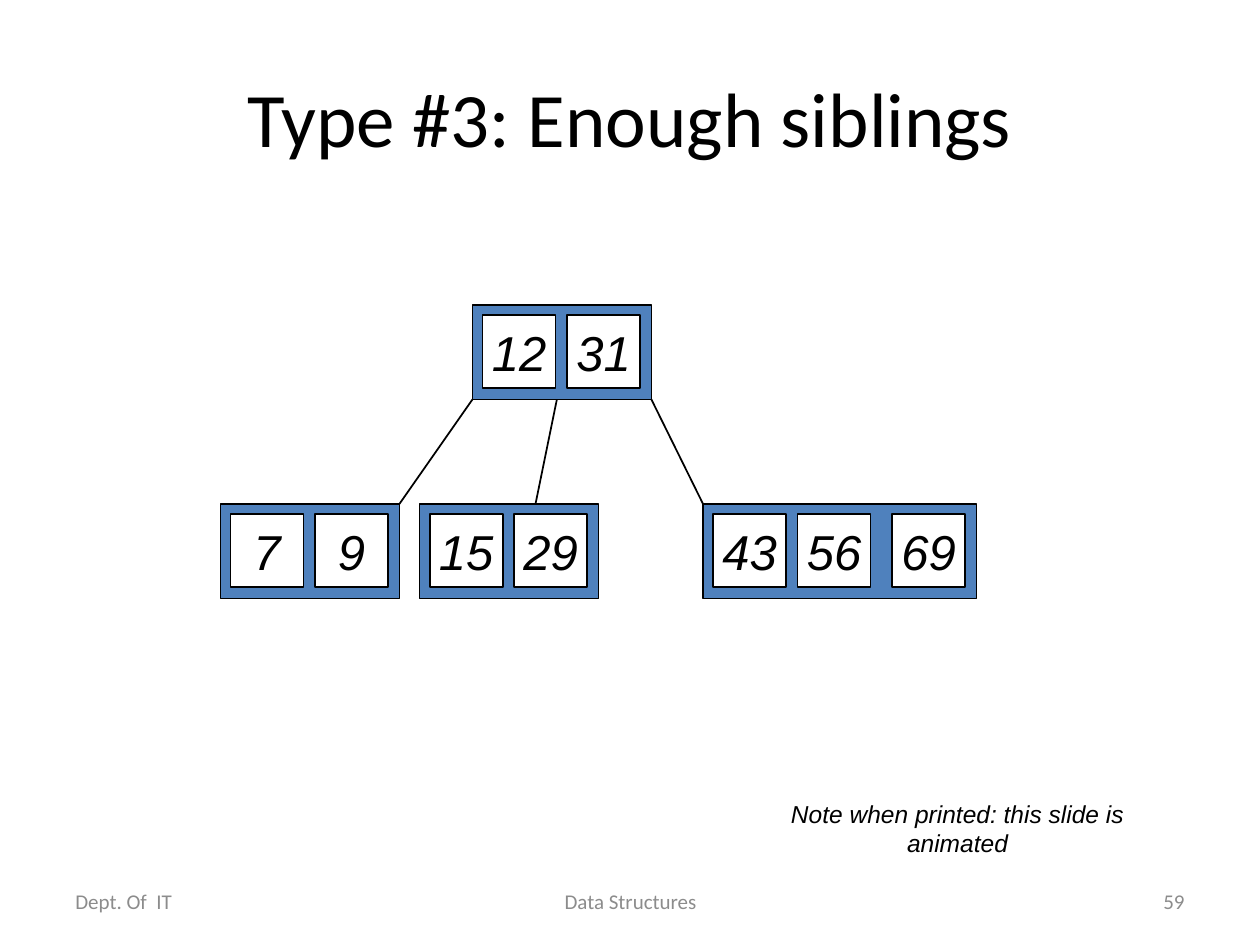
from lxml import etree
from pptx import Presentation
from pptx.dml.color import RGBColor
from pptx.enum.shapes import MSO_CONNECTOR, MSO_SHAPE
from pptx.enum.text import MSO_ANCHOR, PP_ALIGN
from pptx.oxml.ns import qn
from pptx.util import Inches, Pt

LEFT, CENTER, RIGHT = PP_ALIGN.LEFT, PP_ALIGN.CENTER, PP_ALIGN.RIGHT
MIDDLE = MSO_ANCHOR.MIDDLE
RECTANGLE = MSO_SHAPE.RECTANGLE
STRAIGHT = MSO_CONNECTOR.STRAIGHT

BLACK, WHITE, BLUE, GRAY = "000000", "FFFFFF", "4F81BD", "8C8C8C"

TITLE = "Type #3: Enough siblings"
NOTE = "Note when printed: this slide is animated"
FOOTERS = [
    ("Dept. Of  IT", 0.5, 2.33, LEFT),
    ("Data Structures", 3.42, 3.17, CENTER),
    ("59", 7.17, 2.33, RIGHT),
]

NODE_HEIGHT, KEY_SIZE, PADDING = 0.75, 0.58, 0.08
KEY_OFFSETS = [PADDING, 0.75, 1.5]
NODE_WIDTHS = {2: 1.42, 3: 2.17}
ROOT = (3.75, 2.42, ["12", "31"])
# Child left, top, keys; where its edge leaves the root and meets the child
CHILDREN = [
    ((1.75, 4, ["7", "9"]), 0, 1.42),
    ((3.33, 4, ["15", "29"]), 0.67, 0.92),
    ((5.58, 4, ["43", "56", "69"]), 1.42, 0),
]


def color(value):
    return RGBColor.from_string(value)


def write(shape, text, size, font, fill=BLACK, align=CENTER, italic=False, wrap=True):
    frame = shape.text_frame
    frame.word_wrap = wrap
    frame.vertical_anchor = MIDDLE
    para = frame.paragraphs[0]
    para.alignment = align
    span = para.add_run()
    span.text = text
    span.font.size = Pt(size)
    span.font.name = font
    span.font.italic = italic
    span.font.color.rgb = color(fill)


def add_text(page, left, top, width, height, *args, **style):
    box = page.shapes.add_textbox(*map(Inches, (left, top, width, height)))
    write(box, *args, **style)


def outline(shape):
    shape.line.color.rgb = color(BLACK)
    shape.line.width = Pt(1)


def add_box(page, left, top, width, height, fill):
    box = page.shapes.add_shape(RECTANGLE, *map(Inches, (left, top, width, height)))
    box.shadow.inherit = False
    box.fill.solid()
    box.fill.fore_color.rgb = color(fill)
    outline(box)
    return box


def add_node(page, left, top, keys):
    """Draw a tree node with one white cell per key."""
    add_box(page, left, top, NODE_WIDTHS[len(keys)], NODE_HEIGHT, BLUE)
    for key, offset in zip(keys, KEY_OFFSETS):
        cell = add_box(page, left + offset, top + PADDING, KEY_SIZE, KEY_SIZE, WHITE)
        write(cell, key, 28, "Arial", italic=True, wrap=False)


def add_edge(page, start_x, start_y, end_x, end_y):
    edge = page.shapes.add_connector(
        STRAIGHT, *map(Inches, (start_x, start_y, end_x, end_y)))
    outline(edge)
    properties = edge._element.find(qn("p:spPr"))
    etree.SubElement(properties, qn("a:effectLst"))


def main():
    deck = Presentation()
    deck.slide_width, deck.slide_height = Inches(10), Inches(7.5)
    page = deck.slides.add_slide(deck.slide_layouts[5])

    title = page.shapes.title
    title.left, title.top, title.width, title.height = map(Inches, (0.5, 0.3, 9, 1.25))
    write(title, TITLE, 44, "Calibri")

    root_left, root_top, _ = ROOT
    add_node(page, *ROOT)
    for child, start, end in CHILDREN:
        add_node(page, *child)
        add_edge(page, root_left + start, root_top + NODE_HEIGHT,
                 child[0] + end, child[1])

    add_text(page, 5.76, 6.41, 3.68, 0.33, NOTE, 14, "Arial", italic=True)
    for text, left, width, align in FOOTERS:
        add_text(page, left, 6.95, width, 0.4, text, 12, "Calibri",
                 fill=GRAY, align=align)

    deck.save("out.pptx")


if __name__ == "__main__":
    main()
